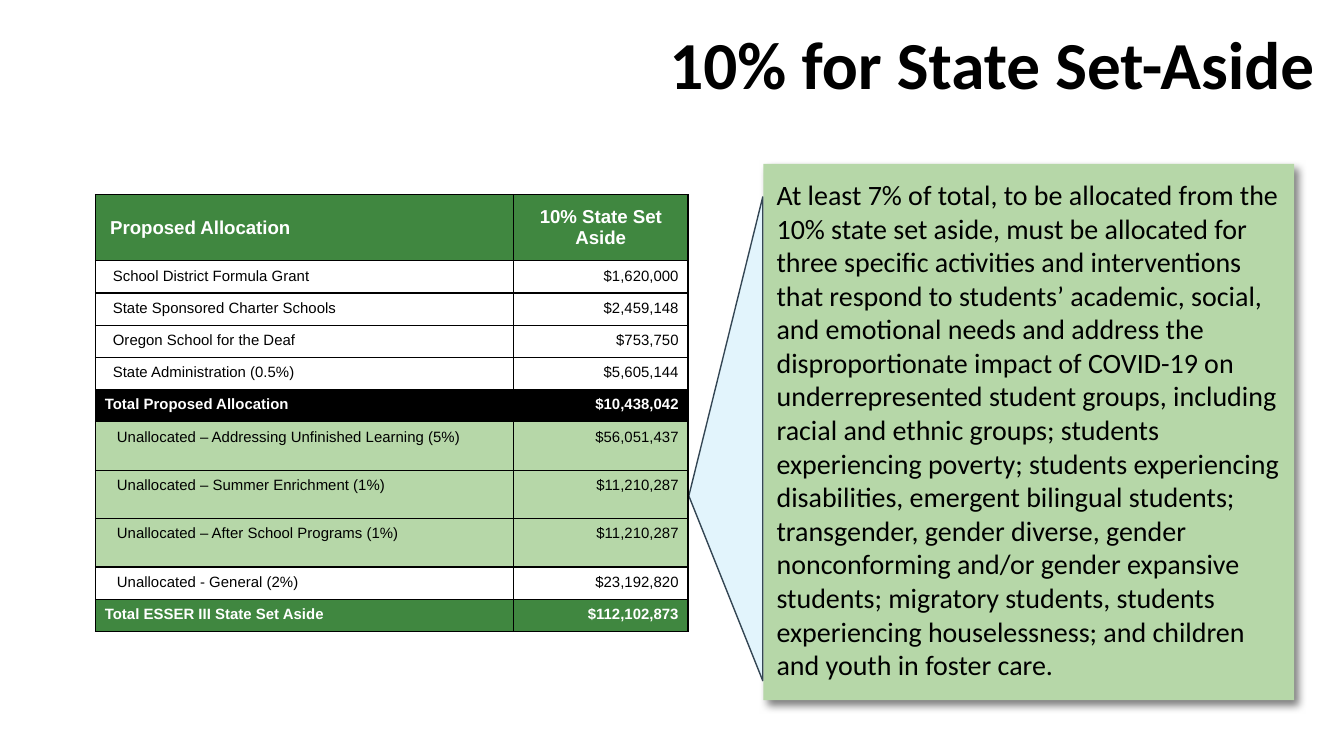
from typing import NamedTuple

from lxml.etree import SubElement
from pptx import Presentation
from pptx.dml.color import RGBColor
from pptx.enum.shapes import MSO_SHAPE as Shape
from pptx.enum.text import MSO_ANCHOR as Anchor, MSO_AUTO_SIZE as AutoSize, PP_ALIGN as Align
from pptx.oxml.ns import qn
from pptx.util import Inches, Pt

COLORS = {
    "black": "000000", "white": "FFFFFF", "green": "408740",
    "light_green": "B6D7A8", "pale_blue": "E2F4FC", "slate": "344654",
}
TITLE = "10% for State Set-Aside"
REQUIREMENT = (
    "At least 7% of total, to be allocated from the 10% state set aside, must be "
    "allocated for three specific activities and interventions that respond to "
    "students’ academic, social, and emotional needs and address the "
    "disproportionate impact of COVID-19 on underrepresented student groups, "
    "including racial and ethnic groups; students experiencing poverty; students "
    "experiencing disabilities, emergent bilingual students; transgender, gender "
    "diverse, gender nonconforming and/or gender expansive students; migratory "
    "students, students experiencing houselessness; and children and youth in "
    "foster care."
)


class RowStyle(NamedTuple):
    """Look shared by the cells of a table row."""
    fill: str
    color: str = "black"
    bold: bool = False
    size: float = 8
    height: float = 0.24
    indent: float = 0
    anchor: Anchor = Anchor.TOP
    value_align: Align = Align.RIGHT


class Allocation(NamedTuple):
    """One table row."""
    label: str
    value: str
    style: RowStyle


HEADER = RowStyle("green", "white", True, 10, 0.49, 0.04, Anchor.MIDDLE, Align.CENTER)
GRANT = RowStyle("white", indent=0.06)
SUBTOTAL = RowStyle("black", "white", True)
RESERVED = RowStyle("light_green", height=0.36, indent=0.09)
GENERAL = RowStyle("white", indent=0.09)
TOTAL = RowStyle("green", "white", True)

ALLOCATIONS = [
    Allocation("Proposed Allocation", "10% State Set Aside", HEADER),
    Allocation("School District Formula Grant", "$1,620,000", GRANT),
    Allocation("State Sponsored Charter Schools", "$2,459,148", GRANT),
    Allocation("Oregon School for the Deaf", "$753,750", GRANT),
    Allocation("State Administration (0.5%)", "$5,605,144", GRANT),
    Allocation("Total Proposed Allocation", "$10,438,042", SUBTOTAL),
    Allocation("Unallocated – Addressing Unfinished Learning (5%)", "$56,051,437", RESERVED),
    Allocation("Unallocated – Summer Enrichment (1%)", "$11,210,287", RESERVED),
    Allocation("Unallocated – After School Programs (1%)", "$11,210,287", RESERVED),
    Allocation("Unallocated - General (2%)", "$23,192,820", GENERAL),
    Allocation("Total ESSER III State Set Aside", "$112,102,873", TOTAL),
]


def rgb(name: str) -> RGBColor:
    """Return a named colour."""
    return RGBColor.from_string(COLORS[name])


def set_attrs(target, values: dict) -> None:
    """Set every attribute in values on target."""
    for name, value in values.items():
        setattr(target, name, value)


def write(tf, text: str, font: str, size: float, color: str = "black",
          bold: bool = False, align: Align = Align.LEFT) -> None:
    """Fill a text frame with one formatted paragraph."""
    tf.word_wrap = True
    p = tf.paragraphs[0]
    p.alignment = align
    r = p.add_run()
    r.text = text
    set_attrs(r.font, {"name": font, "size": Pt(size), "bold": bold})
    r.font.color.rgb = rgb(color)


def add_title(s) -> None:
    """Add the right-aligned title."""
    tf = s.shapes.add_textbox(Inches(2.06), Inches(0.09), Inches(7.82), Inches(0.83)).text_frame
    tf.vertical_anchor = Anchor.MIDDLE
    write(tf, TITLE, "Calibri", 36, bold=True, align=Align.RIGHT)
    tf.paragraphs[0].line_spacing = 0.9


def add_filled(s, kind: Shape, left: float, top: float, width: float, height: float, fill: str):
    """Add a preset shape with a solid fill and no shadow."""
    sp = s.shapes.add_shape(kind, Inches(left), Inches(top), Inches(width), Inches(height))
    sp.shadow.inherit = False
    sp.fill.solid()
    sp.fill.fore_color.rgb = rgb(fill)
    return sp


def add_requirement(s) -> None:
    """Add the shadowed panel that explains the set-aside."""
    sp = add_filled(s, Shape.RECTANGLE, 5.68, 1.22, 3.95, 3.99, "light_green")
    sp.line.fill.background()
    effects = sp._element.spPr.find(qn("a:effectLst"))
    shadow = SubElement(effects, qn("a:outerShdw"), blurRad=str(Pt(4.5)),
                        dist=str(Pt(3.8)), dir=str(50 * 60000), algn="tl", rotWithShape="0")
    color = SubElement(shadow, qn("a:srgbClr"), val=COLORS["black"])
    SubElement(color, qn("a:alpha"), val="50000")
    tf = sp.text_frame
    margins = ("margin_left", "margin_top", "margin_right", "margin_bottom")
    set_attrs(tf, dict.fromkeys(margins, Inches(0.1)))
    set_attrs(tf, {"vertical_anchor": Anchor.TOP, "auto_size": AutoSize.SHAPE_TO_FIT_TEXT})
    write(tf, REQUIREMENT, "Calibri", 15)


def add_pointer(s) -> None:
    """Add the triangle that leads from the table to the panel."""
    sp = add_filled(s, Shape.ISOSCELES_TRIANGLE, 3.6, 2.99, 3.6, 0.55, "pale_blue")
    sp.rotation = 270
    sp.adjustments[0] = 0.382
    sp.line.color.rgb = rgb("slate")
    sp.line.width = Pt(0.75)


def add_borders(cell) -> None:
    """Draw thin black lines on the four sides of a cell."""
    props = cell._tc.get_or_add_tcPr()
    for i, side in enumerate(("lnL", "lnR", "lnT", "lnB")):
        line = SubElement(props, qn(f"a:{side}"), w=str(Pt(0.75)))
        props.insert(i, line)
        fill = SubElement(line, qn("a:solidFill"))
        SubElement(fill, qn("a:srgbClr"), val=COLORS["black"])


def add_allocations(s) -> None:
    """Add the allocation table."""
    height = sum(row.style.height for row in ALLOCATIONS)
    table = s.shapes.add_table(len(ALLOCATIONS), 2, Inches(0.71), Inches(1.45),
                               Inches(4.41), Inches(height)).table
    set_attrs(table, {"first_row": False, "horz_banding": False})
    for column, width in zip(table.columns, (3.11, 1.3)):
        column.width = Inches(width)
    for i, (label, value, style) in enumerate(ALLOCATIONS):
        table.rows[i].height = Inches(style.height)
        entries = ((label, Align.JUSTIFY, style.indent), (value, style.value_align, 0))
        for j, (text, align, indent) in enumerate(entries):
            cell = table.cell(i, j)
            set_attrs(cell, {
                "margin_left": Inches(0.07 + indent), "margin_right": Inches(0.07),
                "margin_top": Inches(0.05), "margin_bottom": Inches(0.05),
                "vertical_anchor": style.anchor,
            })
            cell.fill.solid()
            cell.fill.fore_color.rgb = rgb(style.fill)
            add_borders(cell)
            write(cell.text_frame, text, "Arial", style.size, style.color, style.bold, align)


def main() -> None:
    """Build and save the slide."""
    prs = Presentation()
    set_attrs(prs, {"slide_width": Inches(10), "slide_height": Inches(10 * 9 / 16)})
    s = prs.slides.add_slide(prs.slide_layouts[6])
    add_title(s)
    add_requirement(s)
    add_pointer(s)
    add_allocations(s)
    prs.save("out.pptx")


if __name__ == "__main__":
    main()
